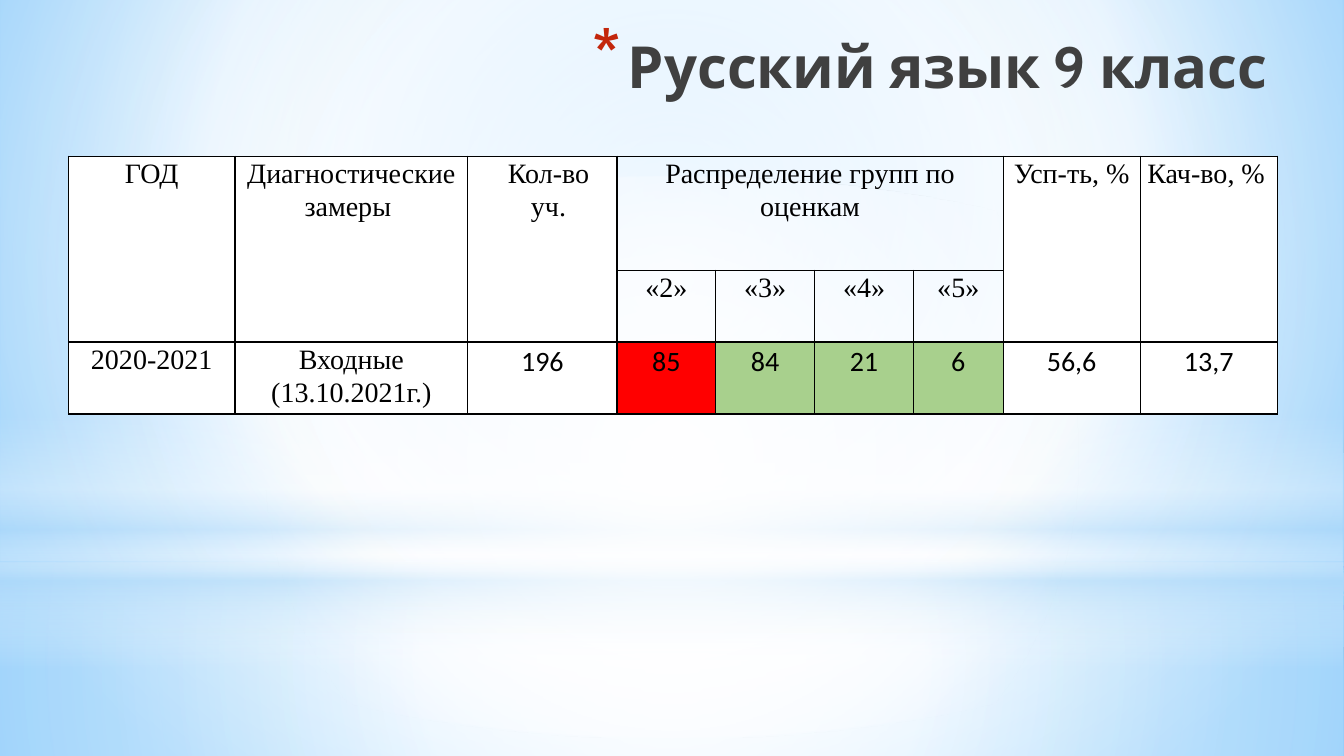
from dataclasses import dataclass
from typing import Any, Optional

from pptx import Presentation
from pptx.dml.color import RGBColor
from pptx.enum.shapes import MSO_SHAPE
from pptx.enum.text import MSO_ANCHOR, PP_ALIGN
from pptx.oxml import parse_xml
from pptx.oxml.ns import nsdecls, qn
from pptx.util import Inches, Pt

RECT, OVAL = MSO_SHAPE.RECTANGLE, MSO_SHAPE.OVAL
LEFT, CENTER, RIGHT = PP_ALIGN.LEFT, PP_ALIGN.CENTER, PP_ALIGN.RIGHT
TOP = MSO_ANCHOR.TOP
BLANK_LAYOUT = 6


@dataclass(frozen=True)
class Theme:
    title_font: str = "Cabin"
    label_font: str = "Times New Roman"
    number_font: str = "Calibri"
    title_size: float = 41.4
    table_size: float = 20
    border_width: float = 1
    title: str = "404040"
    bullet: str = "C3260C"
    ink: str = "000000"
    white: str = "FFFFFF"
    sky: str = "B4DCFA"
    sky_mid: str = "9ED5FF"
    sky_deep: str = "5BB9FF"
    failing: str = "FF0000"
    passing: str = "A8D08D"


THEME = Theme()


@dataclass(frozen=True)
class Stop:
    position: int
    color: str
    opacity: int = 100


@dataclass(frozen=True)
class Glow:
    """A soft backdrop layer; without a focus its gradient runs downwards."""
    outline: Any
    top: float
    height: float
    stops: tuple[Stop, ...]
    focus: Optional[tuple[int, ...]] = (50, 50, 50, 50)


@dataclass(frozen=True)
class Entry:
    row: int
    col: int
    text: str
    fill: Optional[str] = THEME.white
    rows: int = 1
    cols: int = 1
    font: str = THEME.label_font
    align: Any = CENTER
    indent: float = 0


WHITE, SKY = THEME.white, THEME.sky
SKY_STOPS = (Stop(0, THEME.sky_mid), Stop(60, WHITE), Stop(100, THEME.sky_deep))
SKY_FOCUS = (20, 10, 20, 60)
GLOWS = (
    Glow(RECT, 5.58, 1.92, (Stop(0, WHITE, 91), Stop(37, WHITE, 76), Stop(100, SKY, 79))),
    Glow(RECT, 0, 5.58, (Stop(0, WHITE, 89), Stop(48, WHITE, 62), Stop(100, SKY, 79))),
    Glow(RECT, 4.12, 2.5, (Stop(0, WHITE, 0), Stop(29, WHITE, 30), Stop(45, SKY, 40),
                           Stop(55, WHITE, 26), Stop(65, SKY, 60), Stop(100, WHITE, 0)), None),
    Glow(OVAL, 1.75, 5.58, (Stop(0, WHITE), Stop(56, WHITE, 0))),
)

COLUMN_WIDTHS = (1.65, 2.31, 1.48, 0.98, 0.98, 0.98, 0.89, 1.36, 1.36)
ROW_HEIGHTS = (1.13, 0.67, 0.66)
FIRST_GRADE_COL = 3
GRADES = ("«2»", "«3»", "«4»", "«5»")
RESULTS = ("196", "85", "84", "21", "6", "56,6", "13,7")
RESULT_FILLS = (WHITE, THEME.failing) + (THEME.passing,) * 3 + (WHITE,) * 2
ENTRIES = (
    Entry(0, 0, "ГОД", rows=2),
    Entry(0, 1, "Диагностические замеры ", rows=2),
    Entry(0, 2, "Кол-во уч.", rows=2, indent=0.12),
    Entry(0, 3, "Распределение групп по оценкам", None, cols=4),
    Entry(0, 7, "Усп-ть, %", rows=2),
    Entry(0, 8, "Кач-во, %", rows=2, align=LEFT),
    *(Entry(1, col, grade, None) for col, grade in enumerate(GRADES, FIRST_GRADE_COL)),
    Entry(2, 0, "2020-2021"),
    Entry(2, 1, "Входные (13.10.2021г.)"),
    *(Entry(2, col, result, fill, font=THEME.number_font)
      for col, (result, fill) in enumerate(zip(RESULTS, RESULT_FILLS), 2)),
)


def apply(target: Any, formats: dict[str, Any]) -> None:
    for attribute, value in formats.items():
        setattr(target, attribute, value)


def set_gradient(owner: Any, stops: tuple[Stop, ...], focus: Optional[tuple[int, ...]]) -> None:
    """Swap the owner's first empty fill for a radial or downward gradient."""
    stop_xml = "".join(
        f'<a:gs pos="{s.position * 1000}"><a:srgbClr val="{s.color}">'
        f'<a:alpha val="{s.opacity * 1000}"/></a:srgbClr></a:gs>' for s in stops)
    if focus is None:
        direction = '<a:lin ang="5400000" scaled="0"/>'
    else:
        sides = " ".join(f'{side}="{value * 1000}"' for side, value in zip("ltrb", focus))
        direction = f'<a:path path="circle"><a:fillToRect {sides}/></a:path>'
    owner.fill.background()
    empty_fill = next(owner.element.iter(qn("a:noFill")))
    empty_fill.getparent().replace(empty_fill, parse_xml(
        f'<a:gradFill {nsdecls("a")} rotWithShape="1">'
        f'<a:gsLst>{stop_xml}</a:gsLst>{direction}</a:gradFill>'))


@dataclass(frozen=True)
class Backdrop:
    """Pairs the slide's background fill with the element that holds it."""
    fill: Any
    element: Any


def add_glow(slide: Any, glow: Glow, width: int) -> None:
    layer = slide.shapes.add_shape(glow.outline, 0, Inches(glow.top), width, Inches(glow.height))
    layer.shadow.inherit = False
    set_gradient(layer, glow.stops, glow.focus)
    layer.line.fill.background()


def add_title(slide: Any, text: str) -> None:
    heading = slide.shapes.add_textbox(Inches(2.34), Inches(0.3), Inches(10.33), Inches(0.69))
    apply(heading.text_frame, {"word_wrap": True, "vertical_anchor": TOP, "margin_top": 0})
    paragraph = heading.text_frame.paragraphs[0]
    paragraph.alignment = RIGHT
    run = paragraph.add_run()
    run.text = text
    apply(run.font, {"name": THEME.title_font, "size": Pt(THEME.title_size), "bold": True})
    run.font.color.rgb = RGBColor.from_string(THEME.title)
    properties = paragraph._p.get_or_add_pPr()
    properties.set("marL", str(Inches(0.35)))
    properties.set("indent", str(-Inches(0.35)))
    for bullet in (f'buClr {nsdecls("a")}><a:srgbClr val="{THEME.bullet}"/></a:buClr>',
                   f'buSzPct {nsdecls("a")} val="128000"/>',
                   f'buChar {nsdecls("a")} char="*"/>'):
        properties.append(parse_xml(f"<a:{bullet}"))


def set_borders(cell: Any) -> None:
    properties = cell._tc.get_or_add_tcPr()
    for index, side in enumerate("LRTB"):
        properties.insert(index, parse_xml(
            f'<a:ln{side} {nsdecls("a")} w="{Pt(THEME.border_width)}"><a:solidFill>'
            f'<a:srgbClr val="{THEME.ink}"/></a:solidFill></a:ln{side}>'))


def fill_entry(table: Any, entry: Entry) -> None:
    cell = table.cell(entry.row, entry.col)
    if entry.rows > 1 or entry.cols > 1:
        cell.merge(table.cell(entry.row + entry.rows - 1, entry.col + entry.cols - 1))
    apply(cell, {"margin_left": Inches(0.07), "margin_right": Inches(0.07),
                 "margin_top": 0, "margin_bottom": 0, "vertical_anchor": TOP})
    if entry.fill:
        cell.fill.solid()
        cell.fill.fore_color.rgb = RGBColor.from_string(entry.fill)
    paragraph = cell.text_frame.paragraphs[0]
    apply(paragraph, {"alignment": entry.align, "line_spacing": 1.07})
    if entry.indent:
        paragraph._p.get_or_add_pPr().set("marL", str(Inches(entry.indent)))
    run = paragraph.add_run()
    run.text = entry.text
    apply(run.font, {"name": entry.font, "size": Pt(THEME.table_size), "bold": False})
    run.font.color.rgb = RGBColor.from_string(THEME.ink)


def add_results(slide: Any) -> None:
    table = slide.shapes.add_table(
        len(ROW_HEIGHTS), len(COLUMN_WIDTHS), Inches(0.68), Inches(1.55),
        Inches(sum(COLUMN_WIDTHS)), Inches(sum(ROW_HEIGHTS))).table
    apply(table, {"first_row": False, "horz_banding": False})
    for column, width in zip(table.columns, COLUMN_WIDTHS):
        column.width = Inches(width)
    for row, height in zip(table.rows, ROW_HEIGHTS):
        row.height = Inches(height)
    for cell in table.iter_cells():
        cell.fill.background()
        set_borders(cell)
    for entry in ENTRIES:
        fill_entry(table, entry)


def main() -> None:
    deck = Presentation()
    apply(deck, {"slide_width": Inches(13.33), "slide_height": Inches(7.5)})
    slide = deck.slides.add_slide(deck.slide_layouts[BLANK_LAYOUT])
    set_gradient(Backdrop(slide.background.fill, slide.element), SKY_STOPS, SKY_FOCUS)
    for glow in GLOWS:
        add_glow(slide, glow, deck.slide_width)
    add_title(slide, "Русский язык 9 класс")
    add_results(slide)
    deck.save("out.pptx")


if __name__ == "__main__":
    main()
